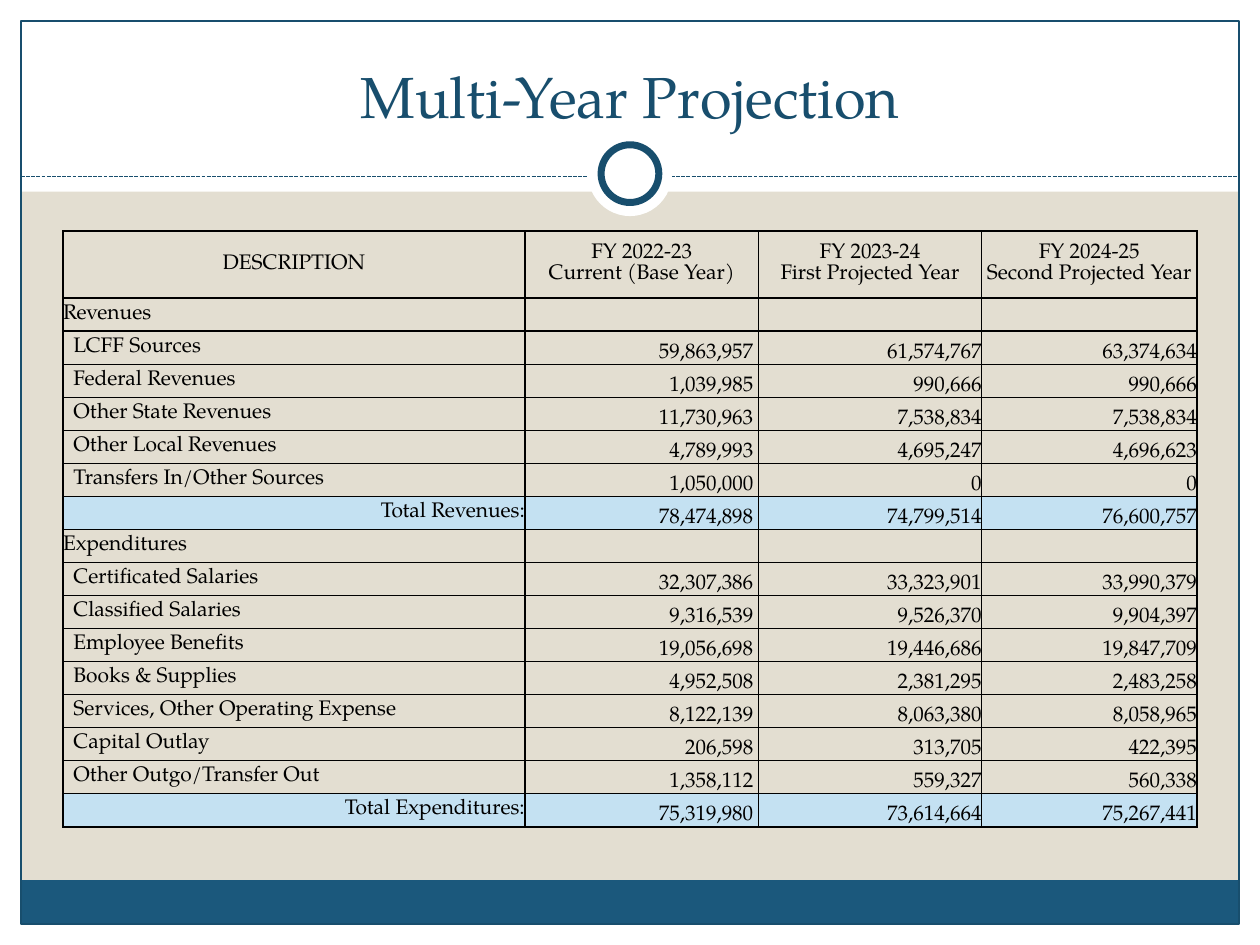
"""Build the multi-year projection slide with its budget table."""
from dataclasses import dataclass

from lxml.etree import SubElement
from pptx import Presentation
from pptx.dml.color import RGBColor
from pptx.enum.dml import MSO_LINE
from pptx.enum.shapes import MSO_CONNECTOR, MSO_SHAPE
from pptx.enum.text import MSO_ANCHOR, PP_ALIGN
from pptx.oxml.ns import qn
from pptx.util import Pt


@dataclass(frozen=True)
class Theme:
    font: str = "TeX Gyre Pagella"
    title_size: int = 33
    table_size: int = 12
    navy: str = "184E6D"
    band: str = "1B587C"
    sand: str = "E3DED1"
    total: str = "C4E1F2"
    white: str = "FFFFFF"
    black: str = "000000"


theme = Theme()


def add_text(para, text, size, color):
    span = para.add_run()
    span.text = text
    span.font.name = theme.font
    span.font.size = Pt(size)
    span.font.color.rgb = RGBColor.from_string(color)


def add_border(cell, side, visible):
    line = SubElement(cell._tc.get_or_add_tcPr(), qn(f"a:ln{side}"), w=str(Pt(1)))
    if visible:
        SubElement(SubElement(line, qn("a:solidFill")), qn("a:srgbClr"), val=theme.black)
    else:
        SubElement(line, qn("a:noFill"))


deck = Presentation()
deck.slide_width, deck.slide_height = Pt(720), Pt(540)
page = deck.slides.add_slide(deck.slide_layouts[5])
page.background.fill.solid()
page.background.fill.fore_color.rgb = RGBColor.from_string(theme.sand)

backdrop = [
    (MSO_SHAPE.RECTANGLE, 0, 528, 720, 12, theme.white, None),
    (MSO_SHAPE.RECTANGLE, 0, 0, 720, 109.5, theme.white, None),
    (MSO_SHAPE.RECTANGLE, 0, 0, 12, 540, theme.white, None),
    (MSO_SHAPE.RECTANGLE, 708, 0, 12, 540, theme.white, None),
    (MSO_SHAPE.RECTANGLE, 12, 503, 696, 25, theme.band, None),
    (MSO_SHAPE.RECTANGLE, 12, 12, 696, 516, None, 0.75),
    (MSO_SHAPE.OVAL, 336, 75.5, 48, 48, theme.white, None),
    (MSO_SHAPE.OVAL, 343.5, 82.75, 33, 33, theme.white, 4),
]
for kind, left, top, width, height, fill, weight in backdrop:
    if kind == MSO_SHAPE.OVAL and weight is None:
        divider = page.shapes.add_connector(
            MSO_CONNECTOR.STRAIGHT, Pt(12), Pt(100.75), Pt(708), Pt(100.75))
        divider.line.color.rgb = RGBColor.from_string(theme.navy)
        divider.line.width = Pt(0.75)
        divider.line.dash_style = MSO_LINE.SQUARE_DOT
        SubElement(divider.element.spPr, qn("a:effectLst"))
    box = page.shapes.add_shape(kind, Pt(left), Pt(top), Pt(width), Pt(height))
    box.shadow.inherit = False
    if fill:
        box.fill.solid()
        box.fill.fore_color.rgb = RGBColor.from_string(fill)
    else:
        box.fill.background()
    if weight:
        box.line.color.rgb = RGBColor.from_string(theme.navy)
        box.line.width = Pt(weight)
    else:
        box.line.fill.background()

title = page.shapes.title
title.element.getparent().append(title.element)
title.left, title.top, title.width, title.height = Pt(24), Pt(18), Pt(672), Pt(60)
title.text_frame.vertical_anchor = MSO_ANCHOR.BOTTOM
title_para = title.text_frame.paragraphs[0]
title_para.alignment = PP_ALIGN.CENTER
title_para.space_after = Pt(6)
add_text(title_para, "Multi-Year Projection", theme.title_size, theme.navy)

rows = [
    ("DESCRIPTION", "FY 2022-23", "FY 2023-24", "FY 2024-25"),
    ("", "Current (Base Year)", "First Projected Year", "Second Projected Year"),
    ("Revenues", "", "", ""),
    ("LCFF Sources", "59,863,957", "61,574,767", "63,374,634"),
    ("Federal Revenues", "1,039,985", "990,666", "990,666"),
    ("Other State Revenues", "11,730,963", "7,538,834", "7,538,834"),
    ("Other Local Revenues", "4,789,993", "4,695,247", "4,696,623"),
    ("Transfers In/Other Sources", "1,050,000", "0", "0"),
    ("Total Revenues:", "78,474,898", "74,799,514", "76,600,757"),
    ("Expenditures", "", "", ""),
    ("Certificated Salaries", "32,307,386", "33,323,901", "33,990,379"),
    ("Classified Salaries", "9,316,539", "9,526,370", "9,904,397"),
    ("Employee Benefits", "19,056,698", "19,446,686", "19,847,709"),
    ("Books & Supplies", "4,952,508", "2,381,295", "2,483,258"),
    ("Services, Other Operating Expense", "8,122,139", "8,063,380", "8,058,965"),
    ("Capital Outlay", "206,598", "313,705", "422,395"),
    ("Other Outgo/Transfer Out", "1,358,112", "559,327", "560,338"),
    ("Total Expenditures:", "75,319,980", "73,614,664", "75,267,441"),
]
column_widths = [264, 133.5, 127.5, 123]
header_height, row_height = 19.2, 18.9
row_heights = [header_height] * 2 + [row_height] * (len(rows) - 2)

table = page.shapes.add_table(
    len(rows), len(column_widths), Pt(36), Pt(132),
    Pt(sum(column_widths)), Pt(sum(row_heights))).table
table.first_row = table.horz_banding = False
for column, width in zip(table.columns, column_widths):
    column.width = Pt(width)
for row, height in zip(table.rows, row_heights):
    row.height = Pt(height)
table.cell(0, 0).merge(table.cell(1, 0))

for row_index, values in enumerate(rows):
    is_header = row_index < 2
    is_total = values[0].startswith("Total")
    is_item = not is_header and not is_total and values[1] != ""
    for column_index, text in enumerate(values):
        cell = table.cell(row_index, column_index)
        is_label = column_index == 0
        cell.margin_top = cell.margin_bottom = 0
        cell.margin_left = Pt(6 if is_label and is_item else 0)
        cell.margin_right = Pt(3 if column_index == 1 and not is_header else 0)
        if is_label:
            cell.vertical_anchor = MSO_ANCHOR.MIDDLE
        elif row_index == 1:
            cell.vertical_anchor = MSO_ANCHOR.TOP
        else:
            cell.vertical_anchor = MSO_ANCHOR.BOTTOM

        open_side = {0: "B", 1: "T"}.get(row_index) if not is_label else None
        for side in "LRTB":
            add_border(cell, side, side != open_side)
        cell.fill.solid()
        cell.fill.fore_color.rgb = RGBColor.from_string(
            theme.total if is_total else theme.sand)

        para = cell.text_frame.paragraphs[0]
        para.font.size = Pt(theme.table_size)
        if is_header:
            para.alignment = PP_ALIGN.CENTER
        elif is_label and not is_total:
            para.alignment = PP_ALIGN.LEFT
        else:
            para.alignment = PP_ALIGN.RIGHT
        if text:
            add_text(para, text, theme.table_size, theme.black)
        else:
            SubElement(para._p, qn("a:endParaRPr"), sz=str(theme.table_size * 100))

deck.save("out.pptx")
